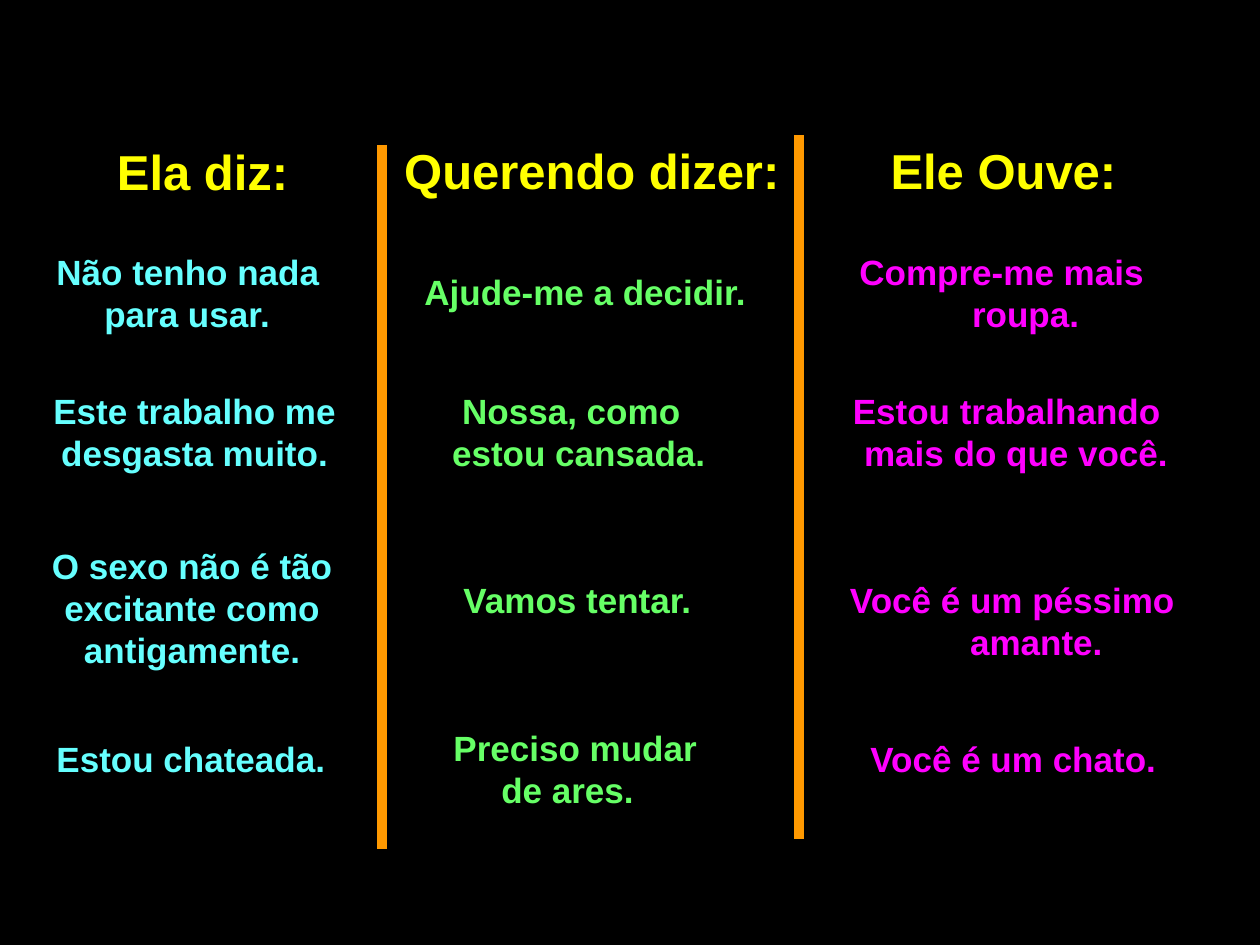
"""Builds a three-column slide comparing what she says, means and he hears."""
from lxml.etree import SubElement
from pptx import Presentation
from pptx.dml.color import RGBColor
from pptx.enum.shapes import MSO_CONNECTOR
from pptx.enum.text import PP_ALIGN
from pptx.oxml.ns import qn
from pptx.util import Inches, Pt

BLACK = RGBColor(0x00, 0x00, 0x00)
YELLOW = RGBColor(0xFF, 0xFF, 0x00)
CYAN = RGBColor(0x66, 0xFF, 0xFF)
GREEN = RGBColor(0x66, 0xFF, 0x66)
MAGENTA = RGBColor(0xFF, 0x00, 0xFF)
ORANGE = RGBColor(0xFF, 0x99, 0x00)
LEFT, CENTER = PP_ALIGN.LEFT, PP_ALIGN.CENTER
HANGING = -0.38
HEADING_TOP = 1.07
DIVIDER_HEIGHT = 5.59

COLUMNS = [
    (("Ela diz:", 0.83, 1.73, 0.58), CYAN, [
        ("Não tenho nada para usar.", 0.35, 1.94, 2.6, 0.79, LEFT, HANGING),
        ("Este trabalho me desgasta muito.", -0.12, 3.04, 2.95, 0.87, CENTER, 0),
        ("O sexo não é tão excitante como antigamente.",
         -0.12, 4.27, 2.91, 1.06, CENTER, 0),
        ("Estou chateada.", 0.35, 5.8, 2.44, 0.55, LEFT, HANGING),
    ]),
    (("Querendo dizer:", 3.11, 3.38, 1.06), GREEN, [
        ("Ajude-me a decidir.", 3.27, 2.1, 2.84, 0.55, LEFT, HANGING),
        ("Nossa, como estou cansada.", 3.11, 3.04, 2.91, 0.71, LEFT, 0.08),
        ("Vamos tentar.", 3.58, 4.54, 2.05, 0.55, LEFT, HANGING),
        ("Preciso mudar de ares.", 3.5, 5.72, 2.52, 0.55, LEFT, HANGING),
    ]),
    (("Ele Ouve:", 6.97, 2.04, 0.63), MAGENTA, [
        ("Compre-me mais roupa.", 6.65, 1.94, 2.6, 0.79, CENTER, HANGING),
        ("Estou trabalhando mais do que você.",
         6.26, 3.04, 3.23, 0.79, CENTER, -0.15),
        ("Você é um péssimo amante.", 6.42, 4.54, 3.23, 0.79, CENTER, HANGING),
        ("Você é um chato.", 6.81, 5.8, 2.68, 0.55, LEFT, HANGING),
    ]),
]
DIVIDERS = [(3.03, 1.15), (6.34, 1.07)]


class SlideBuilder:
    font = "Arial"
    margin = 0.38

    def __init__(self, slide):
        self.s = slide

    def background(self, color):
        fill = self.s.background.fill
        fill.solid()
        fill.fore_color.rgb = color

    def text(self, text, x, y, w, h, color, size=20, align=LEFT, indent=HANGING):
        sp = self.s.shapes.add_textbox(Inches(x), Inches(y), Inches(w), Inches(h))
        tf = sp.text_frame
        tf.word_wrap = True
        p = tf.paragraphs[0]
        p.alignment = align
        pPr = p._p.get_or_add_pPr()
        pPr.set("marL", str(Inches(self.margin)))
        pPr.set("indent", str(Inches(indent)))
        spacing = SubElement(pPr, qn("a:spcBef"))
        SubElement(spacing, qn("a:spcPct")).set("val", "20000")
        r = p.add_run()
        r.text = text
        r.font.name = self.font
        r.font.size = Pt(size)
        r.font.bold = True
        r.font.color.rgb = color

    def divider(self, x, y, height, color):
        line = self.s.shapes.add_connector(
            MSO_CONNECTOR.STRAIGHT,
            Inches(x), Inches(y), Inches(x), Inches(y + height))
        line.line.color.rgb = color
        line.line.width = Pt(6)
        SubElement(line._element.spPr, qn("a:effectLst"))


def main():
    prs = Presentation()
    prs.slide_width, prs.slide_height = Inches(10), Inches(7.5)
    builder = SlideBuilder(prs.slides.add_slide(prs.slide_layouts[6]))
    builder.background(BLACK)
    for x, y in DIVIDERS:
        builder.divider(x, y, DIVIDER_HEIGHT, ORANGE)
    for (heading, x, w, h), color, phrases in COLUMNS:
        builder.text(heading, x, HEADING_TOP, w, h, YELLOW, size=28)
        for phrase, left, top, width, height, align, indent in phrases:
            builder.text(phrase, left, top, width, height, color,
                         align=align, indent=indent)
    prs.save("out.pptx")


if __name__ == "__main__":
    main()
